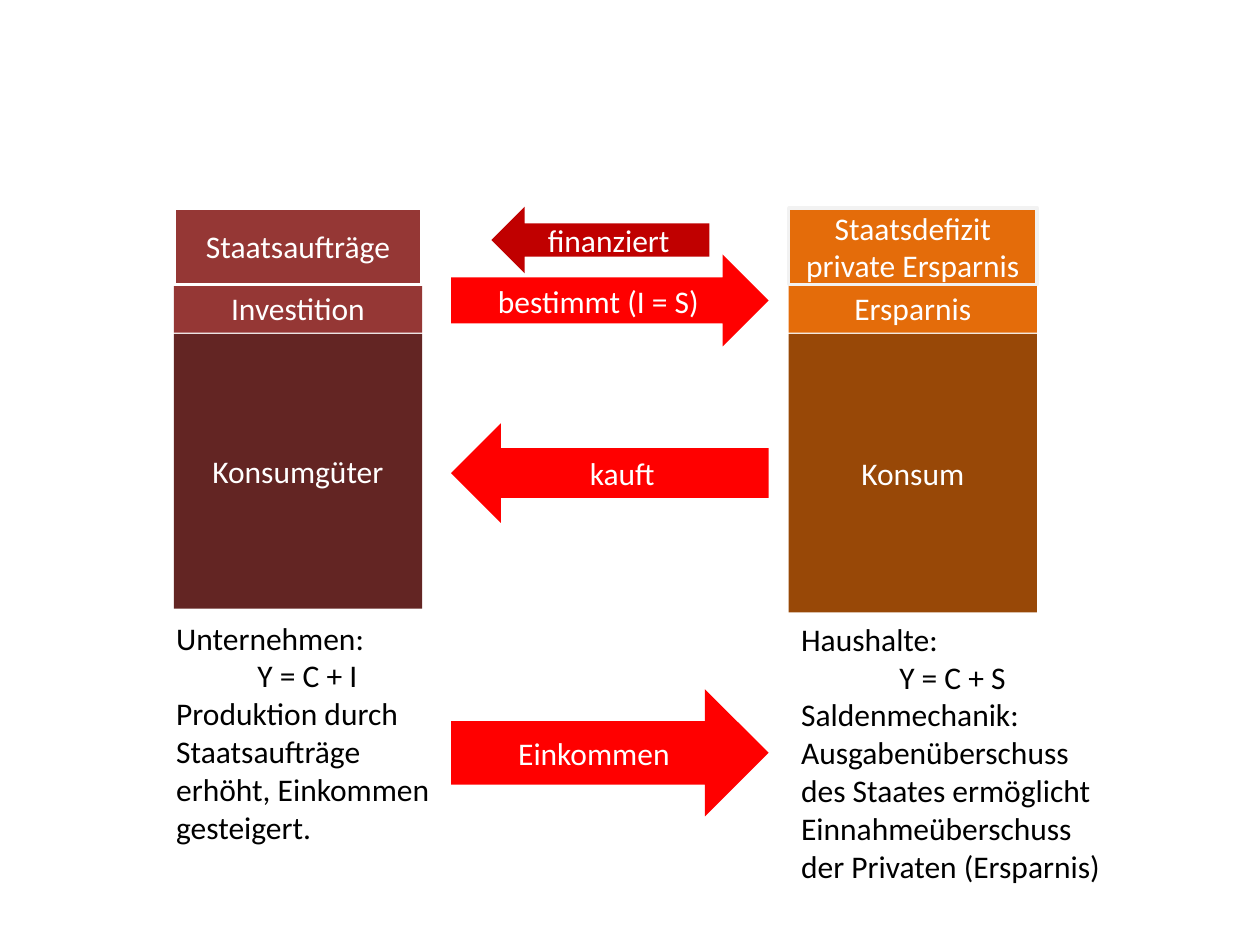
from dataclasses import dataclass

from pptx import Presentation
from pptx.dml.color import RGBColor
from pptx.enum.shapes import MSO_SHAPE
from pptx.enum.text import MSO_ANCHOR, PP_ALIGN
from pptx.util import Pt

RECT = MSO_SHAPE.RECTANGLE
LEFT_ARROW = MSO_SHAPE.LEFT_ARROW
RIGHT_ARROW = MSO_SHAPE.RIGHT_ARROW
MIDDLE = MSO_ANCHOR.MIDDLE
LEFT = PP_ALIGN.LEFT
CENTER = PP_ALIGN.CENTER
EMU_PER_PX = 9144


@dataclass(frozen=True)
class Theme:
    font: str = "Calibri"
    text_size: int = 18
    outline_width: int = 2
    white: str = "FFFFFF"
    black: str = "000000"
    pale: str = "F2F2F2"
    maroon: str = "632523"
    brick: str = "953735"
    brown: str = "984807"
    orange: str = "E46C0A"
    red: str = "FF0000"
    dark_red: str = "C00000"


def px(*lengths):
    return [length * EMU_PER_PX for length in lengths]


class FlowSlide:
    def __init__(self, slide, theme):
        self.slide = slide
        self.theme = theme

    def add_text(self, paragraph, text, color, align):
        paragraph.alignment = align
        run = paragraph.add_run()
        run.text = text
        run.font.name = self.theme.font
        run.font.size = Pt(self.theme.text_size)
        run.font.color.rgb = RGBColor.from_string(color)

    def block(self, kind, box, label, fill, outline=None):
        shape = self.slide.shapes.add_shape(kind, *px(*box))
        shape.shadow.inherit = False
        shape.fill.solid()
        shape.fill.fore_color.rgb = RGBColor.from_string(fill)
        if outline:
            shape.line.color.rgb = RGBColor.from_string(outline)
            shape.line.width = Pt(self.theme.outline_width)
        else:
            shape.line.fill.background()
        frame = shape.text_frame
        frame.word_wrap = True
        frame.vertical_anchor = MIDDLE
        self.add_text(frame.paragraphs[0], label, self.theme.white, CENTER)

    def note(self, box, lines):
        frame = self.slide.shapes.add_textbox(*px(*box)).text_frame
        frame.word_wrap = True
        for index, (text, align) in enumerate(lines):
            paragraph = frame.add_paragraph() if index else frame.paragraphs[0]
            self.add_text(paragraph, text, self.theme.black, align)


def main():
    presentation = Presentation()
    presentation.slide_width, presentation.slide_height = px(1000, 750)
    blank = presentation.slide_layouts[6]
    theme = Theme()
    flow = FlowSlide(presentation.slides.add_slide(blank), theme)

    firms_x, households_x, column_width = 138, 626, 197
    state_y, saving_y, consumption_y = 165, 225, 265
    flow_x, flow_width = 358, 252

    columns = [
        (firms_x, 218, "Konsumgüter", theme.maroon,
         "Investition", theme.brick, "Staatsaufträge", theme.white),
        (households_x, 221, "Konsum", theme.brown,
         "Ersparnis", theme.orange, "Staatsdefizit private Ersparnis", theme.pale),
    ]
    for x, height, consumption, dark, saving, light, state, outline in columns:
        flow.block(RECT, (x, consumption_y, column_width, height), consumption, dark)
        flow.block(RECT, (x, saving_y, column_width, 39), saving, light)
        flow.block(RECT, (x, state_y, column_width, 61), state, light, outline)

    flow.note((130, 486, 228, 192), [
        ("Unternehmen:", LEFT),
        ("Y = C + I", CENTER),
        ("Produktion durch Staatsaufträge erhöht, Einkommen gesteigert.", LEFT),
    ])
    flow.note((households_x, 487, 260, 222), [
        ("Haushalte:", LEFT),
        ("Y = C + S", CENTER),
        ("Saldenmechanik:", LEFT),
        ("Ausgabenüberschuss des Staates ermöglicht", LEFT),
        ("Einnahmeüberschuss der Privaten (Ersparnis)", LEFT),
    ])

    flow.block(RIGHT_ARROW, (flow_x, 547, flow_width, 101), "Einkommen", theme.red)
    flow.block(LEFT_ARROW, (flow_x, 336, flow_width, 79), "kauft", theme.red)
    flow.block(LEFT_ARROW, (390, 164, 173, 53), "finanziert", theme.dark_red)
    flow.block(RIGHT_ARROW, (flow_x, 202, flow_width, 73), "bestimmt (I = S)", theme.red)

    presentation.save("out.pptx")


if __name__ == "__main__":
    main()
